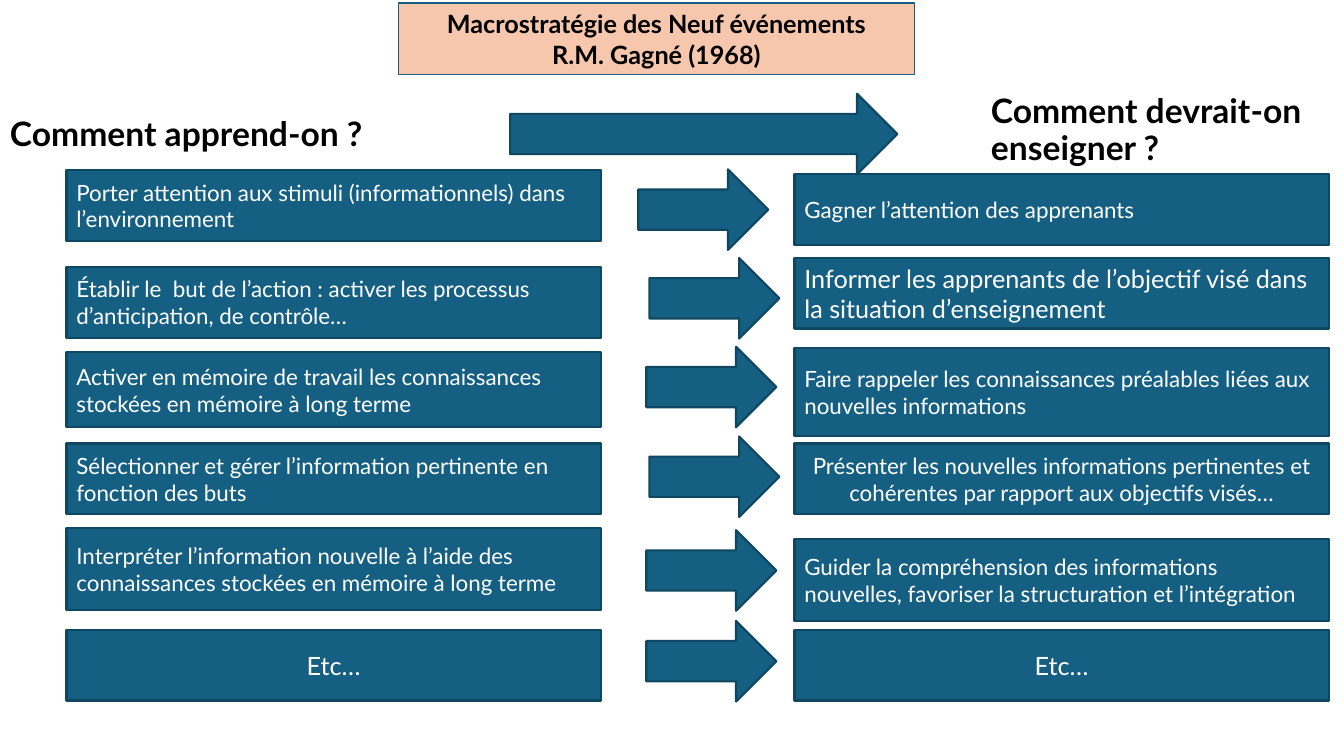
from pptx import Presentation
from pptx import util as u
from pptx.dml.color import RGBColor
from pptx.enum import shapes, text

PX = 9144  # EMU per px, 100 px to the inch
COLORS = {"blue": "156082", "edge": "104760", "peach": "F6C6AD",
          "black": "000000", "white": "FFFFFF"}
LEFT_X, RIGHT_X, BOX_WIDTH = 66, 788, 530
ARROW_WIDTH, ARROW_HEIGHT = 129, 80

# (text, top, height, format) for learning and teaching, then arrow (left, top)
STEPS = [
    (("Porter attention aux stimuli (informationnels) dans l’environnement", 169, 70, {}),
     ("Gagner l’attention des apprenants", 173, 70, {}),
     (633, 168)),
    (("Établir le  but de l’action : activer les processus d’anticipation, de contrôle…",
      265, 70, {}),
     ("Informer les apprenants de l’objectif visé dans la situation d’enseignement",
      256, 70, {"size": 18}),
     (644, 256)),
    (("Activer en mémoire de travail les connaissances stockées en mémoire à long terme",
      349, 75, {}),
     ("Faire rappeler les connaissances préalables liées aux nouvelles informations",
      345, 88, {}),
     (641, 344)),
    (("Sélectionner et gérer l’information pertinente en fonction des buts", 440, 70, {}),
     ("Présenter les nouvelles informations pertinentes et cohérentes par rapport "
      "aux objectifs visés…", 440, 70, {"centered": True}),
     (644, 433)),
    (("Interpréter l’information nouvelle à l’aide des connaissances stockées en "
      "mémoire à long terme", 524, 81, {}),
     ("Guider la compréhension des informations nouvelles, favoriser la structuration "
      "et l’intégration", 535, 81, {}),
     (641, 526)),
    (("Etc…", 625, 70, {"size": 18, "centered": True}),
     ("Etc…", 625, 70, {"size": 18, "centered": True}),
     (641, 616)),
]


def write_text(shape, content, size=16, color="white", bold=False, centered=False,
               anchor=text.MSO_ANCHOR.MIDDLE, line_spacing=1.0, bottom=5):
    """Fill the shape with one paragraph per line of content."""
    frame = shape.text_frame
    frame.word_wrap = True
    frame.vertical_anchor = anchor
    frame.margin_bottom = bottom * PX
    frame.text = content
    for paragraph in frame.paragraphs:
        paragraph.alignment = text.PP_ALIGN.CENTER if centered else text.PP_ALIGN.LEFT
        paragraph.line_spacing = line_spacing
        font = paragraph.runs[0].font
        font.name = "Lato"
        font.size = u.Pt(size)
        font.bold = bold
        font.color.rgb = RGBColor.from_string(COLORS[color])


class SlideBuilder:
    def __init__(self, slide):
        self.slide = slide

    def preset(self, kind, left, top, width, height, fill="blue", line="edge", weight=1.5):
        shape = self.slide.shapes.add_shape(
            kind, left * PX, top * PX, width * PX, height * PX)
        shape.shadow.inherit = False
        shape.fill.solid()
        shape.fill.fore_color.rgb = RGBColor.from_string(COLORS[fill])
        shape.line.color.rgb = RGBColor.from_string(COLORS[line])
        shape.line.width = u.Pt(weight)
        return shape

    def box(self, content, left, top, width, height, style, **look):
        shape = self.preset(shapes.MSO_SHAPE.RECTANGLE, left, top, width, height, **look)
        write_text(shape, content, **style)

    def arrow(self, left, top, width=ARROW_WIDTH):
        self.preset(shapes.MSO_SHAPE.RIGHT_ARROW, left, top, width, ARROW_HEIGHT)

    def heading(self, content, left, top, width, height, **style):
        shape = self.slide.shapes.add_textbox(left * PX, top * PX, width * PX, height * PX)
        write_text(shape, content, size=24, color="black", bold=True,
                   line_spacing=0.9, **style)


def main():
    presentation = Presentation()
    presentation.slide_width = 1333 * PX
    presentation.slide_height = 750 * PX
    builder = SlideBuilder(presentation.slides.add_slide(presentation.slide_layouts[6]))

    builder.heading("Comment apprend-on ?", 0, 74, 395, 91,
                    anchor=text.MSO_ANCHOR.BOTTOM, bottom=13)
    builder.heading("Comment devrait-on enseigner ?", 973, 89, 360, 59,
                    anchor=text.MSO_ANCHOR.TOP)
    for learning, teaching, arrow_position in STEPS:
        for left, (content, top, height, style) in ((LEFT_X, learning), (RIGHT_X, teaching)):
            builder.box(content, left, top, BOX_WIDTH, height, style)
        builder.arrow(*arrow_position)
    builder.box("Macrostratégie des Neuf événements\nR.M. Gagné (1968)", 395, 3, 512, 71,
                {"size": 18, "color": "black", "bold": True, "centered": True},
                fill="peach", line="blue", weight=0.75)
    builder.arrow(506, 93, width=384)

    presentation.save("out.pptx")


if __name__ == "__main__":
    main()
